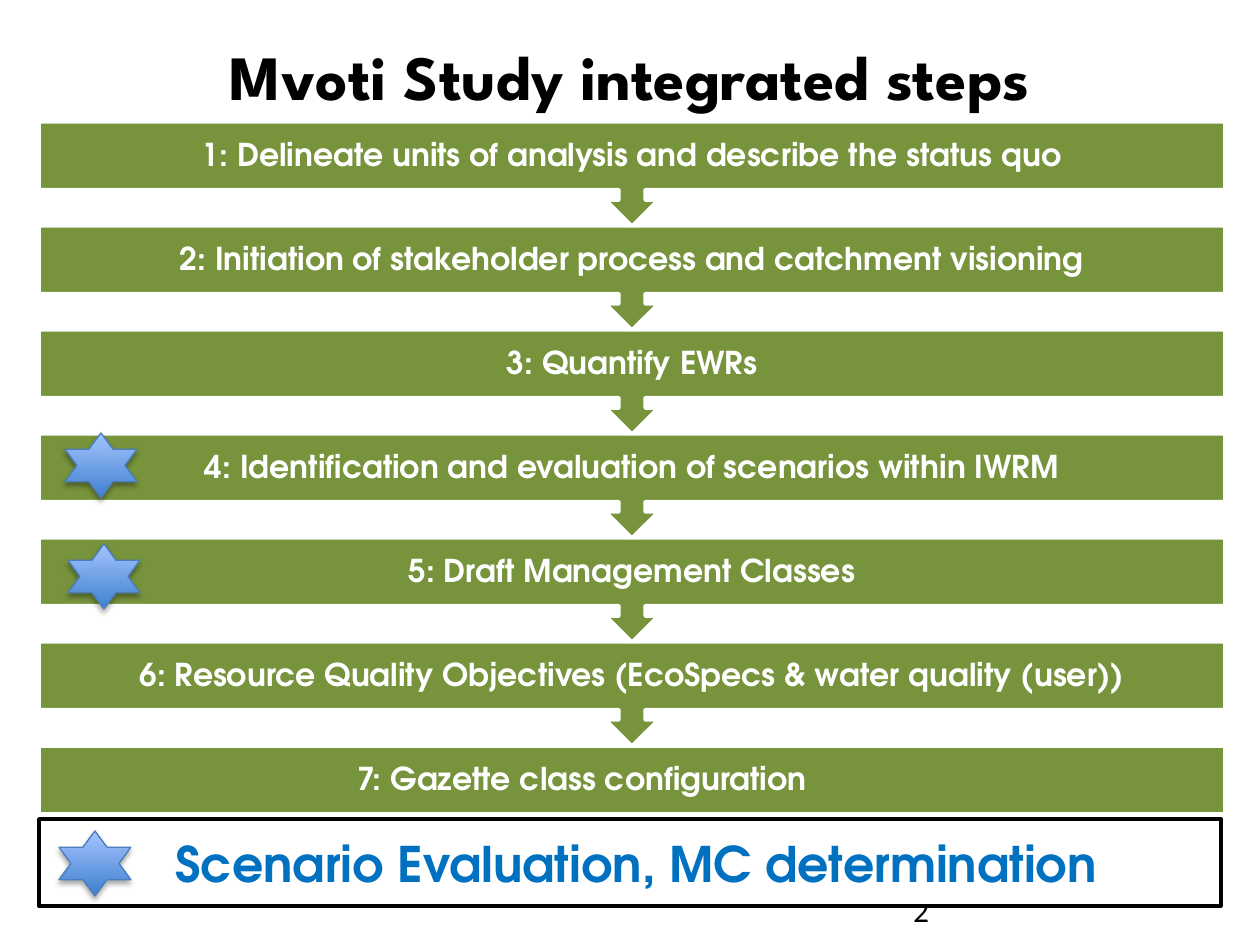
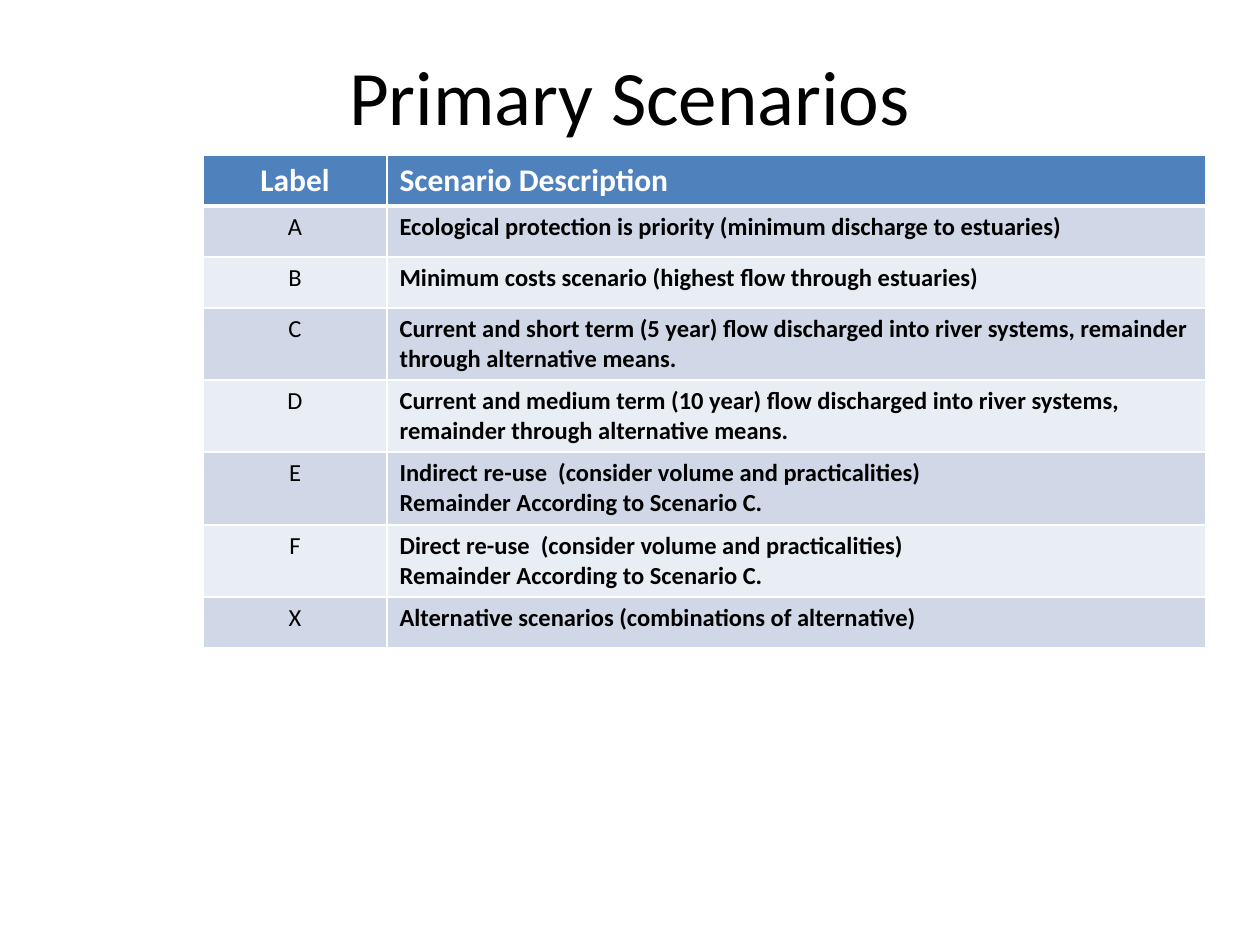
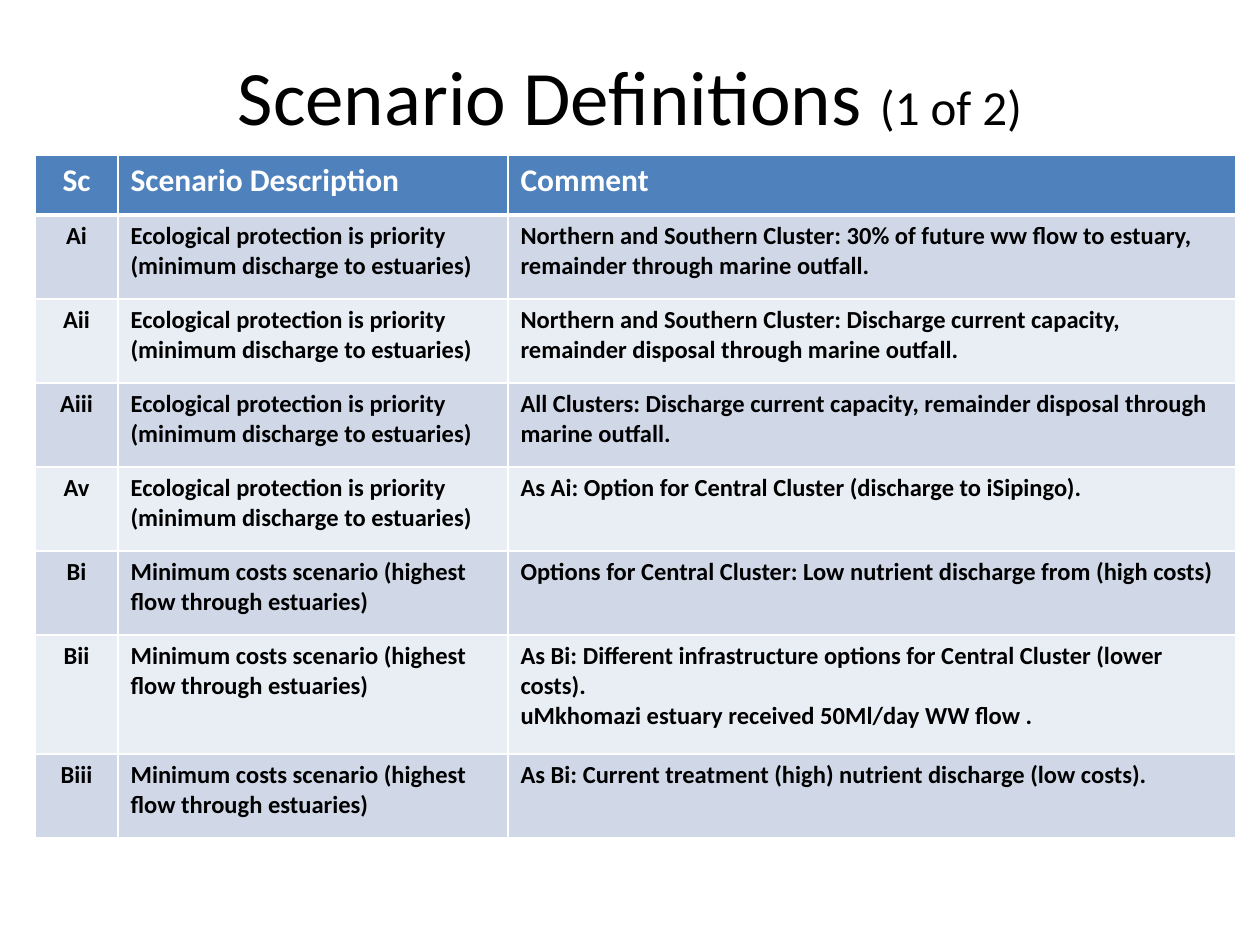
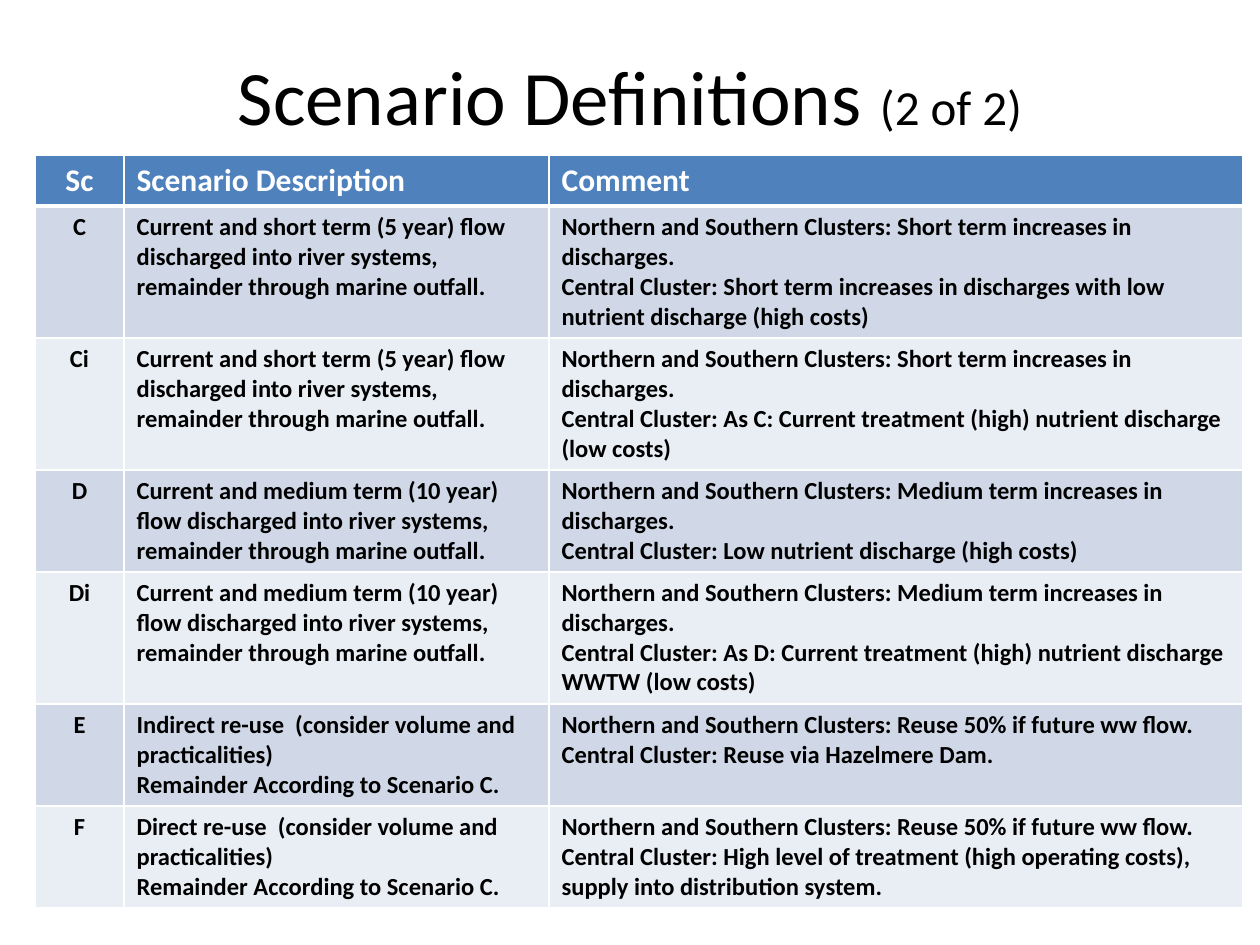
from lxml import etree
from pptx import Presentation
from pptx import util as u
from pptx.dml.color import RGBColor
from pptx.enum import shapes, text
from pptx.oxml.ns import qn

PX = 914400 / 126
COLORS = {
    "black": "000000", "white": "FFFFFF", "step": "77933C", "key": "0070C0",
    "header": "4F81BD", "odd": "D0D8E8", "even": "E9EDF4",
    "star_dark": "3F80CE", "star_light": "A4C4FF", "star_line": "4B7EBC",
}
BODY, HEADING, STEP_FONT = "Calibri", "League Spartan", "TeX Gyre Adventor"
LEFT, CENTER = text.PP_ALIGN.LEFT, text.PP_ALIGN.CENTER
TOP, MIDDLE = text.MSO_ANCHOR.TOP, text.MSO_ANCHOR.MIDDLE

STEPS = [
    "1: Delineate units of analysis and describe the status quo",
    "2: Initiation of stakeholder process and catchment visioning",
    "3: Quantify EWRs",
    "4: Identification and evaluation of scenarios within IWRM",
    "5: Draft Management Classes",
    "6: Resource Quality Objectives (EcoSpecs & water quality (user))",
    "7: Gazette class configuration",
]
STARS = [(59, 831), (65, 433), (68, 544)]

PROTECTION = "Ecological protection is priority (minimum discharge to estuaries)"
MIN_COST = "Minimum costs scenario (highest flow through estuaries)"
SHORT_FLOW = "Current and short term (5 year) flow discharged into river systems, remainder through "
MEDIUM_FLOW = "Current and medium term (10 year) flow discharged into river systems, remainder through "
INDIRECT = "Indirect re-use  (consider volume and practicalities)\nRemainder According to Scenario C."
DIRECT = "Direct re-use  (consider volume and practicalities)\nRemainder According to Scenario C."
SHORT_RISE = "Northern and Southern Clusters: Short term increases in discharges.\nCentral Cluster: "
MEDIUM_RISE = "Northern and Southern Clusters: Medium term increases in discharges.\nCentral Cluster: "
REUSE = "Northern and Southern Clusters: Reuse 50% if future ww flow.\nCentral Cluster: "

TABLES = [
    {
        "title": [("Primary Scenarios", 44)],
        "left": 203, "columns": [184, 819], "bold_labels": False,
        "heights": [51, 51, 51, 72, 72, 73, 72, 51],
        "rows": [
            ("Label", "Scenario Description"),
            ("A", PROTECTION),
            ("B", MIN_COST),
            ("C", SHORT_FLOW + "alternative means."),
            ("D", MEDIUM_FLOW + "alternative means."),
            ("E", INDIRECT),
            ("F", DIRECT),
            ("X", "Alternative scenarios (combinations of alternative)"),
        ],
    },
    {
        "title": [("Scenario Definitions ", 44), ("(1 of 2)", 28)],
        "left": 35, "columns": [83, 390, 728], "bold_labels": True,
        "heights": [60, 84, 84, 84, 84, 84, 119, 84],
        "rows": [
            ("Sc", "Scenario Description", "Comment"),
            ("Ai", PROTECTION, "Northern and Southern Cluster: 30% of future ww flow to estuary, "
                               "remainder through marine outfall."),
            ("Aii", PROTECTION, "Northern and Southern Cluster: Discharge current capacity, "
                                "remainder disposal through marine outfall."),
            ("Aiii", PROTECTION, "All Clusters: Discharge current capacity, "
                                 "remainder disposal through marine outfall."),
            ("Av", PROTECTION, "As Ai: Option for Central Cluster (discharge to iSipingo)."),
            ("Bi", MIN_COST, "Options for Central Cluster: Low nutrient discharge from (high costs)"),
            ("Bii", MIN_COST, "As Bi: Different infrastructure options for Central Cluster (lower costs).\n"
                              "uMkhomazi estuary received 50Ml/day WW flow ."),
            ("Biii", MIN_COST, "As Bi: Current treatment (high) nutrient discharge (low costs)."),
        ],
    },
    {
        "title": [("Scenario Definitions ", 44), ("(2 of 2)", 28)],
        "left": 35, "columns": [89, 425, 694], "bold_labels": True,
        "heights": [51, 132, 132, 102, 132, 102, 102],
        "rows": [
            ("Sc", "Scenario Description", "Comment"),
            ("C", SHORT_FLOW + "marine outfall.",
             SHORT_RISE + "Short term increases in discharges with low nutrient discharge (high costs)"),
            ("Ci", SHORT_FLOW + "marine outfall.",
             SHORT_RISE + "As C: Current treatment (high) nutrient discharge (low costs)"),
            ("D", MEDIUM_FLOW + "marine outfall.",
             MEDIUM_RISE + "Low nutrient discharge (high costs)"),
            ("Di", MEDIUM_FLOW + "marine outfall.",
             MEDIUM_RISE + "As D: Current treatment (high) nutrient discharge WWTW (low costs)"),
            ("E", INDIRECT, REUSE + "Reuse via Hazelmere Dam."),
            ("F", DIRECT, REUSE + "High level of treatment (high operating costs), "
                                  "supply into distribution system."),
        ],
    },
]


def px(length):
    return u.Emu(round(length * PX))


def rgb(name):
    return RGBColor.from_string(COLORS[name])


def write(frame, content, size=18, font=BODY, color="black", bold=False,
          align=LEFT, spacing=None):
    runs_by_line = [[(line, size)] for line in content.split("\n")] \
        if isinstance(content, str) else [content]
    for index, runs in enumerate(runs_by_line):
        paragraph = frame.add_paragraph() if index else frame.paragraphs[0]
        paragraph.alignment = align
        if spacing:
            paragraph.line_spacing = spacing
        for words, points in runs:
            run = paragraph.add_run()
            run.text = words
            run.font.size = u.Pt(points)
            run.font.name = font
            run.font.bold = bold
            run.font.color.rgb = rgb(color)


def set_frame(frame, insets, anchor):
    frame.word_wrap = True
    frame.vertical_anchor = anchor
    (frame.margin_left, frame.margin_top,
     frame.margin_right, frame.margin_bottom) = map(px, insets)


def add_text(slide, box, content, insets=(12, 6, 12, 6), anchor=TOP, **style):
    frame = slide.shapes.add_textbox(*map(px, box)).text_frame
    set_frame(frame, insets, anchor)
    write(frame, content, **style)


def add_title(slide, top, inset, runs, **style):
    add_text(slide, (63, top, 1134, 157), runs, insets=(12, inset, 12, 6),
             align=CENTER, **style)


def add_box(slide, kind, box, line, width, fill=None):
    shape = slide.shapes.add_shape(kind, *map(px, box))
    shape.shadow.inherit = False
    shape.line.color.rgb = rgb(line)
    shape.line.width = u.Pt(width)
    if fill:
        shape.fill.solid()
        shape.fill.fore_color.rgb = rgb(fill)
    return shape


def add_star(slide, left, top):
    star = add_box(slide, shapes.MSO_SHAPE.STAR_6_POINT, (left, top, 72, 65), "star_line", 0.75)
    star.fill.gradient()
    star.fill.gradient_angle = 90
    for stop, name in zip(star.fill.gradient_stops, ("star_dark", "star_light")):
        stop.color.rgb = rgb(name)
    effects = star._element.spPr.find(qn("a:effectLst"))
    shadow = etree.SubElement(effects, qn("a:outerShdw"), blurRad=str(u.Pt(3.1)),
                              dist=str(u.Pt(1.8)), dir="5400000", rotWithShape="0")
    color = etree.SubElement(shadow, qn("a:srgbClr"), val=COLORS["black"])
    etree.SubElement(color, qn("a:alpha"), val="35000")


def add_steps(slide):
    left, first_top, width, pitch, height = 39, 122, 1186, 104, 68
    last = len(STEPS) - 1
    for index in range(last, -1, -1):
        top = first_top + index * pitch
        if index == last:
            kind, shape_height = shapes.MSO_SHAPE.RECTANGLE, height
        else:
            kind, shape_height = shapes.MSO_SHAPE.UP_ARROW_CALLOUT, pitch
        step = add_box(slide, kind, (left, top, width, shape_height), "white", 2, "step")
        if index < last:
            step.rotation = 180
        right_inset = 118 if index == last else 18
        add_text(slide, (left, top, width, height), STEPS[index],
                 insets=(18, 18, right_inset, 18), anchor=MIDDLE, font=STEP_FONT,
                 color="white", bold=True, align=CENTER, spacing=0.9)


def set_border(cell, side, width):
    line = etree.SubElement(cell._tc.get_or_add_tcPr(), qn(f"a:{side}"), w=str(u.Pt(width)))
    fill = etree.SubElement(line, qn("a:solidFill"))
    etree.SubElement(fill, qn("a:srgbClr"), val=COLORS["white"])


def add_scenarios(slide, left, columns, heights, rows, bold_labels):
    table = slide.shapes.add_table(len(rows), len(columns), px(left), px(155),
                                   px(sum(columns)), px(sum(heights))).table
    table.horz_banding = False
    for column, width in zip(table.columns, columns):
        column.width = px(width)
    for r, (values, height) in enumerate(zip(rows, heights)):
        table.rows[r].height = px(height)
        header = r == 0
        fill = "header" if header else ("even", "odd")[r % 2]
        for c, value in enumerate(values):
            cell = table.cell(r, c)
            for side in ("lnL", "lnR", "lnT", "lnB"):
                thick = (header and side == "lnB") or (r == 1 and side == "lnT")
                set_border(cell, side, 3 if thick else 1)
            cell.fill.solid()
            cell.fill.fore_color.rgb = rgb(fill)
            write(cell.text_frame, value, size=18 if header else 14,
                  color="white" if header else "black",
                  bold=header or c > 0 or bold_labels, align=LEFT if c else CENTER)


def add_steps_slide(presentation):
    slide = presentation.slides.add_slide(presentation.slide_layouts[6])
    add_title(slide, 18, 20, [("Mvoti Study integrated steps", 36)], font=HEADING, bold=True)
    add_steps(slide)
    add_text(slide, (903, 886, 294, 50), "2", insets=(10, 5, 12, 6))
    banner = add_box(slide, shapes.MSO_SHAPE.RECTANGLE, (39, 819, 1182, 87), "black", 2, "white")
    set_frame(banner.text_frame, (24, 6, 12, 6), MIDDLE)
    write(banner.text_frame, "Scenario Evaluation, MC determination", size=28,
          font=STEP_FONT, color="key", bold=True, align=CENTER)
    for left, top in STARS:
        add_star(slide, left, top)


def add_table_slide(presentation, title, **scenarios):
    slide = presentation.slides.add_slide(presentation.slide_layouts[6])
    add_title(slide, 38, 10, title)
    add_scenarios(slide, **scenarios)


def main():
    presentation = Presentation()
    presentation.slide_width, presentation.slide_height = px(1260), px(945)
    add_steps_slide(presentation)
    for content in TABLES:
        add_table_slide(presentation, **content)
    presentation.save("out.pptx")


if __name__ == "__main__":
    main()
